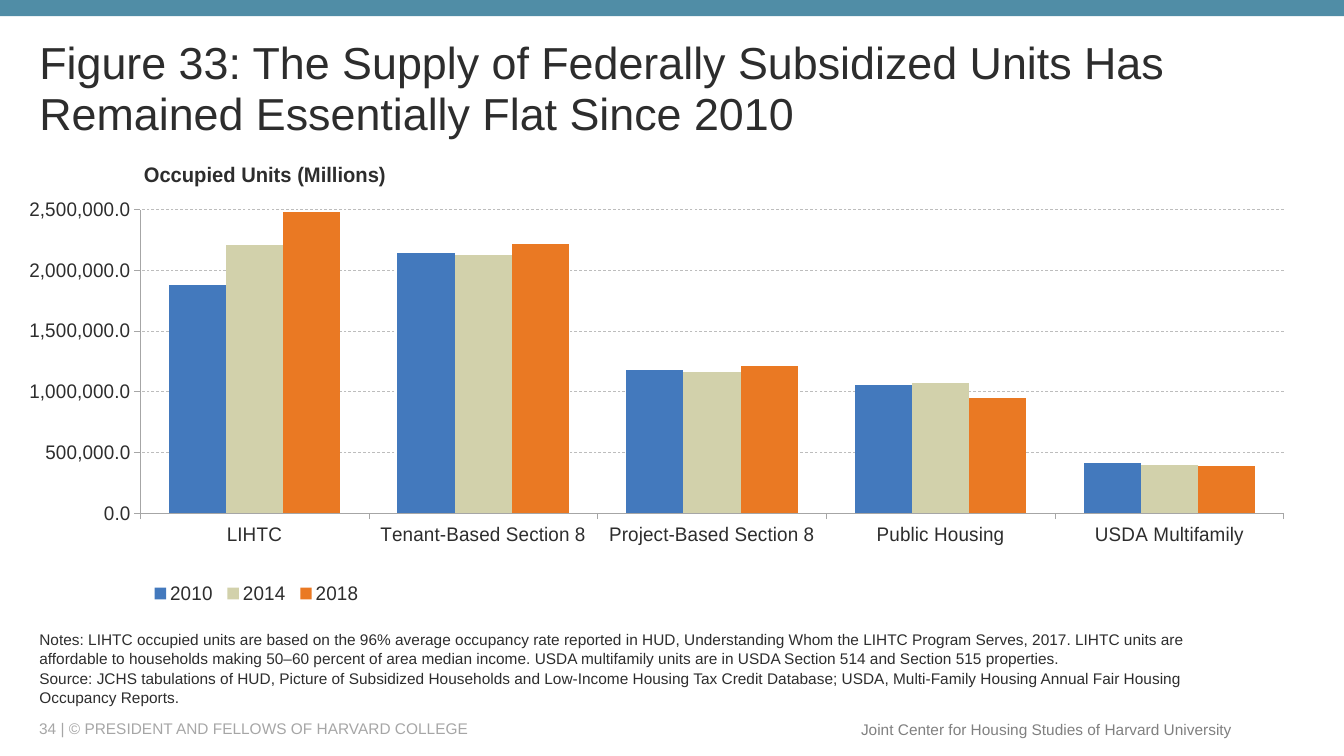
import pptx
import pptx.util
import pptx.chart.data
import pptx.dml.color
import pptx.enum.chart
import pptx.enum.dml
import pptx.enum.shapes
import pptx.enum.text
import pptx.oxml
import pptx.oxml.ns
from dataclasses import dataclass

# Content
TITLE = ("Figure 33: The Supply of Federally Subsidized Units Has "
         "Remained Essentially Flat Since 2010")
HEAD = "Occupied Units (Millions)"
CATS = ["LIHTC", "Tenant-Based Section 8", "Project-Based Section 8",
        "Public Housing", "USDA Multifamily"]
DATA = {
    "2010": (1880000, 2140000, 1180000, 1060000, 410000),
    "2014": (2210000, 2130000, 1160000, 1070000, 400000),
    "2018": (2480000, 2220000, 1210000, 950000, 390000),
}
NOTES = [
    "Notes: LIHTC occupied units are based on the 96% average occupancy rate "
    "reported in HUD, Understanding Whom the LIHTC Program Serves, 2017. LIHTC "
    "units are affordable to households making 50–60 percent of area median "
    "income. USDA multifamily units are in USDA Section 514 and Section 515 "
    "properties.",
    "Source: JCHS tabulations of HUD, Picture of Subsidized Households and "
    "Low-Income Housing Tax Credit Database; USDA, Multi-Family Housing Annual "
    "Fair Housing Occupancy Reports.",
]
RIGHTS = "34 | © PRESIDENT AND FELLOWS OF HARVARD COLLEGE"
CENTER = "Joint Center for Housing Studies of Harvard University"


@dataclass(frozen=True)
class Theme:
    face: str = "Arial"
    ink: str = "2D2D2D"
    bar: str = "508DA6"
    pale: str = "A6A6A6"
    gray: str = "808080"
    grid: str = "BDBDBD"
    fills: tuple = ("4379BD", "D2D1AB", "EA7923")
    big: int = 32
    head: int = 15
    label: int = 14
    small: int = 11


# Places in px, 100 to the inch: left, top, width, height
UNIT = 9144
SIZE = (1333, 750)
BAR = (0, 0, 1333, 16)
TOP = (29, 40, 1265, 97)
CHART = (29, 145, 1265, 460)
NOTE = (29, 648, 1175, 58)
LEFT = (29, 713, 792, 20)
RIGHT = (842, 709, 390, 29)

# Places inside the chart, as shares of its size
PLOT = (0.05, 0.137, 0.933, 0.655)
KEY = (0.055, 0.93, 0.18, 0.07)
NAME = (0.05, 0.025)

theme = Theme()
ALIGN = pptx.enum.text.PP_ALIGN
ANCHOR = pptx.enum.text.MSO_ANCHOR


def emu(box):
    return [n * UNIT for n in box]


def rgb(code):
    return pptx.dml.color.RGBColor.from_string(code)


def style(font, size, color, bold=False):
    font.name = theme.face
    font.size = pptx.util.Pt(size)
    font.bold = bold
    font.color.rgb = rgb(color)


def write(shape, lines, size, color, anchor, align=ALIGN.LEFT, space=1.0):
    frame = shape.text_frame
    frame.word_wrap = True
    frame.auto_size = pptx.enum.text.MSO_AUTO_SIZE.NONE
    frame.vertical_anchor = anchor
    frame.text = "\n".join(lines)
    for par in frame.paragraphs:
        props = par._p.get_or_add_pPr()
        props.set("marL", "0")
        props.set("indent", "0")
        props.append(pptx.oxml.parse_xml(
            f"<a:buNone {pptx.oxml.ns.nsdecls('a')}/>"))
        par.alignment = align
        par.line_spacing = space
        par.space_before = pptx.util.Pt(0)
        style(par.font, size, color)


def place(shape, box):
    shape.left, shape.top, shape.width, shape.height = emu(box)


def layout(parent, spots, inner=False):
    """Give a chart part a fixed place: x, y and, if listed, w, h."""
    tags = ["x", "y", "w", "h"][:len(spots)]
    rows = '<c:layoutTarget val="inner"/>' if inner else ""
    rows += "".join(f'<c:{t}Mode val="edge"/>' for t in tags[:2])
    rows += "".join(f'<c:{t} val="{n}"/>' for t, n in zip(tags, spots))
    node = pptx.oxml.parse_xml(
        f"<c:layout {pptx.oxml.ns.nsdecls('c')}>"
        f"<c:manualLayout>{rows}</c:manualLayout></c:layout>")
    for old in parent.findall(pptx.oxml.ns.qn("c:layout")):
        parent.remove(old)
    prior = [kid for kid in parent
             if kid.tag in (pptx.oxml.ns.qn("c:tx"),
                            pptx.oxml.ns.qn("c:legendPos"))]
    parent.insert(len(prior), node)


def rule(line, color):
    line.color.rgb = rgb(color)
    line.width = pptx.util.Pt(0.5)


# Slide, title and notes
deck = pptx.Presentation()
deck.slide_width, deck.slide_height = emu(SIZE)
slide = deck.slides.add_slide(deck.slide_layouts[1])
title, notes = slide.placeholders
place(title, TOP)
write(title, [TITLE], theme.big, theme.ink, ANCHOR.MIDDLE, space=0.95)
place(notes, NOTE)
write(notes, NOTES, theme.small, theme.ink, ANCHOR.BOTTOM, space=1.05)

# Top bar and footer
bar = slide.shapes.add_shape(
    pptx.enum.shapes.MSO_SHAPE.RECTANGLE, *emu(BAR))
bar.shadow.inherit = False
bar.fill.solid()
bar.fill.fore_color.rgb = rgb(theme.bar)
bar.line.fill.background()
for box, text, color, align in [(LEFT, RIGHTS, theme.pale, ALIGN.LEFT),
                                (RIGHT, CENTER, theme.gray, ALIGN.RIGHT)]:
    foot = slide.shapes.add_textbox(*emu(box))
    write(foot, [text], theme.small, color, ANCHOR.MIDDLE, align)

# Chart
data = pptx.chart.data.CategoryChartData(number_format="#,##0.0")
data.categories = CATS
for name, vals in DATA.items():
    data.add_series(name, vals)
chart = slide.shapes.add_chart(
    pptx.enum.chart.XL_CHART_TYPE.COLUMN_CLUSTERED, *emu(CHART), data).chart
style(chart.font, theme.label, theme.ink)
plot = chart.plots[0]
plot.gap_width = 100
plot.overlap = 0
plot.vary_by_categories = False
for series, color in zip(plot.series, theme.fills):
    series.format.fill.solid()
    series.format.fill.fore_color.rgb = rgb(color)
layout(chart._chartSpace.chart.plotArea, PLOT, inner=True)

# Axes
for axis in (chart.category_axis, chart.value_axis):
    axis.major_tick_mark = pptx.enum.chart.XL_TICK_MARK.OUTSIDE
    style(axis.tick_labels.font, theme.label, theme.ink)
    rule(axis.format.line, theme.pale)
scale = chart.value_axis
scale.minimum_scale = 0
scale.maximum_scale = 2500000
scale.major_unit = 500000
scale.tick_labels.number_format = "#,##0.0"
scale.tick_labels.number_format_is_linked = False
grid = scale.major_gridlines.format.line
rule(grid, theme.grid)
grid.dash_style = pptx.enum.dml.MSO_LINE.DASH

# Chart title and legend
chart.has_title = True
head = chart.chart_title
head.text_frame.text = HEAD
style(head.text_frame.paragraphs[0].font, theme.head, theme.ink, bold=True)
layout(head._element, NAME)
chart.has_legend = True
key = chart.legend
key.position = pptx.enum.chart.XL_LEGEND_POSITION.BOTTOM
key.include_in_layout = False
style(key.font, theme.label, theme.ink)
layout(key._element, KEY)

deck.save("out.pptx")
